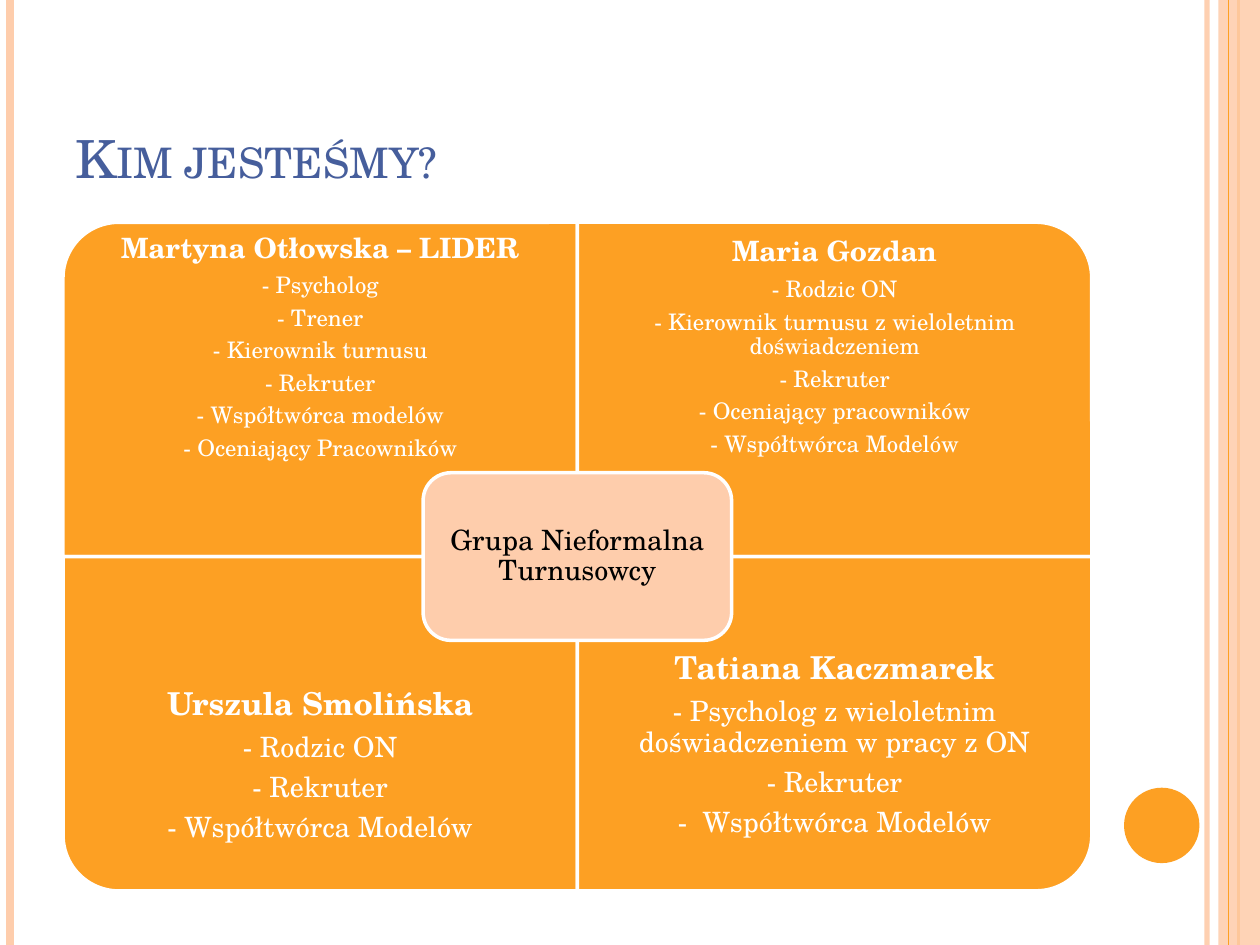
from lxml.etree import SubElement
from pptx import Presentation
from pptx.dml.color import RGBColor
from pptx.enum.shapes import MSO_CONNECTOR, MSO_SHAPE
from pptx.enum.text import MSO_ANCHOR, PP_ALIGN
from pptx.oxml.ns import qn
from pptx.util import Cm, Pt

ORANGE = RGBColor(0xFD, 0xA0, 0x23)
PEACH = RGBColor(0xFE, 0xCD, 0xAC)
BLUE = RGBColor(0x46, 0x5E, 0x9C)
WHITE = RGBColor(0xFF, 0xFF, 0xFF)
BLACK = RGBColor(0, 0, 0)
FONT = "TeX Gyre Schola"

presentation = Presentation()
presentation.slide_width = Cm(25.4)
presentation.slide_height = Cm(19.05)
slide = presentation.slides.add_slide(presentation.slide_layouts[6])


def add_filled_shape(kind, left, top, width, height, color, outlined=False):
    shape = slide.shapes.add_shape(kind, Cm(left), Cm(top), Cm(width), Cm(height))
    shape.shadow.inherit = False
    shape.fill.solid()
    shape.fill.fore_color.rgb = color
    if outlined:
        shape.line.color.rgb = WHITE
        shape.line.width = Pt(2)
    else:
        shape.line.fill.background()
    return shape


def add_text(left, top, width, height, lines, color, inset, extra_bottom=0):
    box = slide.shapes.add_textbox(Cm(left), Cm(top), Cm(width), Cm(height))
    frame = box.text_frame
    frame.word_wrap = True
    frame.vertical_anchor = MSO_ANCHOR.MIDDLE
    frame.margin_left = frame.margin_right = frame.margin_top = Cm(inset)
    frame.margin_bottom = Cm(inset + extra_bottom)
    for index, (text, size, bold) in enumerate(lines):
        paragraph = frame.paragraphs[0] if index == 0 else frame.add_paragraph()
        paragraph.text = text
        paragraph.alignment = PP_ALIGN.CENTER
        paragraph.line_spacing = 0.9
        paragraph.space_after = Pt(size * 0.35)
        paragraph.font.name = FONT
        paragraph.font.size = Pt(size)
        paragraph.font.bold = bold
        paragraph.font.color.rgb = color


band = add_filled_shape(MSO_SHAPE.RECTANGLE, 24.56, 0, 0.84, 19.05, PEACH)
rules = []
for x, color, weight in [
    (24.33, PEACH, 3),
    (0.21, PEACH, 4.5),
    (24.97, ORANGE, 1.5),
    (24.77, ORANGE, 0.75),
]:
    rule = slide.shapes.add_connector(MSO_CONNECTOR.STRAIGHT, Cm(x), 0, Cm(x), Cm(19.05))
    rule.line.color.rgb = color
    rule.line.width = Pt(weight)
    SubElement(rule._element.spPr, qn("a:effectLst"))
    rules.append(rule)

slide.shapes._spTree.remove(band._element)
rules[2]._element.addnext(band._element)
for shape, alpha in [(band, 87000), (rules[0], 93000)]:
    color_element = next(shape._element.spPr.iter(qn("a:srgbClr")))
    SubElement(color_element, qn("a:alpha"), val=str(alpha))

add_filled_shape(MSO_SHAPE.OVAL, 22.66, 15.88, 1.52, 1.52, ORANGE)

title = slide.shapes.add_textbox(Cm(1.27), Cm(0.76), Cm(20.75), Cm(3.18))
title.text_frame.word_wrap = True
title.text_frame.vertical_anchor = MSO_ANCHOR.BOTTOM
paragraph = title.text_frame.paragraphs[0]
run = paragraph.add_run()
run.text = "Kim jesteśmy?"
run.font.name = FONT
run.font.size = Pt(30)
run.font.color.rgb = BLUE
run.font._element.set("cap", "small")

LEFT, TOP = 1.27, 4.48
WIDTH, HEIGHT = 10.37, 6.74
TEXT_HEIGHT = HEIGHT * 0.75

people = [
    (0, 0, 270, 16, 13, 0.3, 0, "Martyna Otłowska – LIDER", [
        "- Psycholog", "- Trener", "- Kierownik turnusu", "- Rekruter",
        "- Współtwórca modelów", "- Oceniający Pracowników"]),
    (1, 0, 0, 16, 13, 0.3, 0, "Maria Gozdan", [
        "- Rodzic ON", "- Kierownik turnusu z wieloletnim doświadczeniem",
        "- Rekruter", "- Oceniający pracowników", "- Współtwórca Modelów"]),
    (0, 1, 180, 18, 16, 0.36, 0, "Urszula Smolińska", [
        "- Rodzic ON", "- Rekruter", "- Współtwórca Modelów"]),
    (1, 1, 90, 18, 16, 0.36, 0.81, "Tatiana Kaczmarek", [
        "- Psycholog z wieloletnim doświadczeniem w pracy z ON",
        "- Rekruter", "-  Współtwórca Modelów"]),
]

for column, row, rotation, name_size, role_size, inset, extra_bottom, name, roles in people:
    left = LEFT + column * WIDTH
    top = TOP + row * HEIGHT
    width, height = (HEIGHT, WIDTH) if rotation in (90, 270) else (WIDTH, HEIGHT)
    quadrant = add_filled_shape(
        MSO_SHAPE.ROUND_1_RECTANGLE,
        left + (WIDTH - width) / 2, top + (HEIGHT - height) / 2,
        width, height, ORANGE, outlined=True)
    quadrant.rotation = rotation
    lines = [(name, name_size, True)] + [(role, role_size, False) for role in roles]
    text_top = top + row * (HEIGHT - TEXT_HEIGHT)
    add_text(left, text_top, WIDTH, TEXT_HEIGHT, lines, WHITE, inset, extra_bottom)

add_filled_shape(MSO_SHAPE.ROUNDED_RECTANGLE, 8.53, 9.53, 6.22, 3.38, PEACH, outlined=True)
add_text(8.69, 9.69, 5.9, 3.05, [("Grupa Nieformalna Turnusowcy", 16, False)], BLACK, 0.18)

presentation.save("out.pptx")
